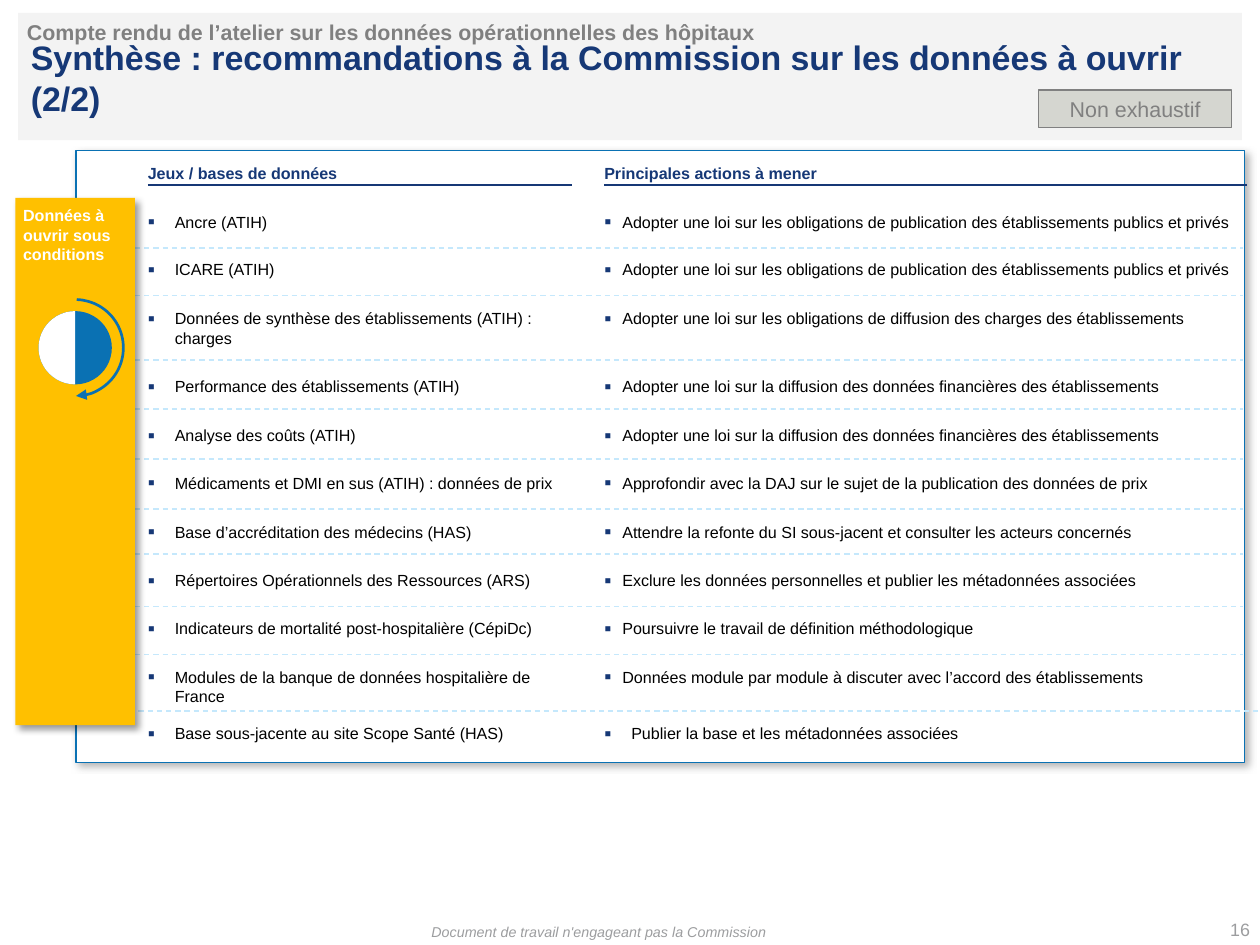
from dataclasses import dataclass

import lxml.etree
import pptx
import pptx.dml.color
import pptx.enum.dml
import pptx.enum.shapes
import pptx.enum.text
import pptx.oxml
import pptx.oxml.ns
import pptx.util
from pptx.dml.color import RGBColor
from pptx.enum.shapes import MSO_SHAPE
from pptx.enum.text import MSO_ANCHOR, PP_ALIGN
from pptx.util import Inches, Pt

NAVY = RGBColor(0x16, 0x38, 0x76)
BLUE = RGBColor(0x0A, 0x71, 0xB3)
PALE_BLUE = RGBColor(0xC5, 0xE8, 0xFC)
YELLOW = RGBColor(0xFF, 0xC0, 0x00)
WHITE = RGBColor(0xFF, 0xFF, 0xFF)
BLACK = RGBColor(0x00, 0x00, 0x00)
GREY = RGBColor(0x80, 0x80, 0x80)
FOOTER_GREY = RGBColor(0x9C, 0x9D, 0x9F)
BANNER_GREY = RGBColor(0xF3, 0xF3, 0xF3)
STICKER_GREY = RGBColor(0xD5, 0xD6, 0xD0)

FONT = "Arial"
DATASET_INDENT = 0.21
ACTION_INDENT = 0.14
RULE_SPAN = (0.62, 9.67)


@dataclass(frozen=True)
class Box:
    left: float
    top: float
    width: float
    height: float


@dataclass(frozen=True)
class TextStyle:
    size: float
    color: RGBColor
    bold: bool = False
    italic: bool = False
    align: PP_ALIGN = PP_ALIGN.LEFT
    anchor: MSO_ANCHOR = MSO_ANCHOR.TOP
    wrap: bool = True
    insets: tuple[float, float, float, float] = (0, 0, 0, 0)


@dataclass(frozen=True)
class Column:
    heading: str
    left: float
    width: float
    rule_end: float


@dataclass(frozen=True)
class Row:
    top: float
    dataset: str
    action: str
    rule: float | None
    action_indent: float = ACTION_INDENT
    rule_span: tuple[float, float] = RULE_SPAN


DATASETS = Column("Jeux / bases de données", 1.15, 3.3, 4.45)
ACTIONS = Column("Principales actions à mener", 4.7, 4.99, 9.7)

PUBLICATION_LAW = "Adopter une loi sur les obligations de publication des établissements publics et privés"
FINANCE_LAW = "Adopter une loi sur la diffusion des données financières des établissements"

ROWS = [
    Row(1.65, "Ancre (ATIH)", PUBLICATION_LAW, 1.93),
    Row(2.02, "ICARE (ATIH)", PUBLICATION_LAW, 2.3),
    Row(2.4, "Données de synthèse des établissements (ATIH) : charges",
        "Adopter une loi sur les obligations de diffusion des charges des établissements", 2.8),
    Row(2.93, "Performance des établissements (ATIH)", FINANCE_LAW, 3.18),
    Row(3.31, "Analyse des coûts (ATIH)", FINANCE_LAW, 3.57),
    Row(3.68, "Médicaments et DMI en sus (ATIH) : données de prix",
        "Approfondir avec la DAJ sur le sujet de la publication des données de prix", 3.96),
    Row(4.06, "Base d’accréditation des médecins (HAS)",
        "Attendre la refonte du SI sous-jacent et consulter les acteurs concernés", 4.31),
    Row(4.44, "Répertoires Opérationnels des Ressources (ARS)",
        "Exclure les données personnelles et publier les métadonnées associées", 4.72),
    Row(4.81, "Indicateurs de mortalité post-hospitalière (CépiDc)",
        "Poursuivre le travail de définition méthodologique", 5.09),
    Row(5.19, "Modules de la banque de données hospitalière de France",
        "Données module par module à discuter avec l’accord des établissements", 5.53,
        rule_span=(0.79, 9.8)),
    Row(5.63, "Base sous-jacente au site Scope Santé (HAS)",
        "Publier la base et les métadonnées associées", None, action_indent=DATASET_INDENT),
]

BODY = TextStyle(9, BLACK)
HEADING = TextStyle(9, NAVY, bold=True, anchor=MSO_ANCHOR.BOTTOM, insets=(0, 0, 0, 0.02))


def add_child(parent, tag: str, **attributes: str):
    child = lxml.etree.SubElement(parent, pptx.oxml.ns.qn(tag))
    for name, value in attributes.items():
        child.set(name, value)
    return child


def add_bullet(paragraph, indent: float) -> None:
    properties = paragraph._p.get_or_add_pPr()
    properties.set("marL", str(Inches(indent)))
    properties.set("indent", str(-Inches(indent)))
    add_child(add_child(properties, "a:buClr"), "a:srgbClr", val=str(NAVY))
    add_child(properties, "a:buSzPct", val="125000")
    add_child(properties, "a:buFont", typeface=FONT)
    add_child(properties, "a:buChar", char="▪")


def write_text(shape, text: str, style: TextStyle, indent: float | None = None) -> None:
    frame = shape.text_frame
    frame.word_wrap = style.wrap
    frame.vertical_anchor = style.anchor
    (frame.margin_left, frame.margin_top,
     frame.margin_right, frame.margin_bottom) = map(Inches, style.insets)
    paragraph = frame.paragraphs[0]
    paragraph.alignment = style.align
    if indent is not None:
        add_bullet(paragraph, indent)
    run = paragraph.add_run()
    run.text = text
    run.font.name = FONT
    run.font.size = Pt(style.size)
    run.font.bold = style.bold
    run.font.italic = style.italic
    run.font.color.rgb = style.color


def add_text(slide, box: Box, text: str, style: TextStyle, indent: float | None = None) -> None:
    shape = slide.shapes.add_textbox(
        Inches(box.left), Inches(box.top), Inches(box.width), Inches(box.height))
    write_text(shape, text, style, indent)


def add_figure(slide, kind: MSO_SHAPE, box: Box, fill: RGBColor | None = None,
               line: RGBColor | None = None, weight: float = 0.75,
               adjustments: tuple[float, ...] = ()):
    shape = slide.shapes.add_shape(
        kind, Inches(box.left), Inches(box.top), Inches(box.width), Inches(box.height))
    shape.shadow.inherit = False
    for index, value in enumerate(adjustments):
        shape.adjustments[index] = value
    if fill is None:
        shape.fill.background()
    else:
        shape.fill.solid()
        shape.fill.fore_color.rgb = fill
    if line is None:
        shape.line.fill.background()
    else:
        shape.line.color.rgb = line
        shape.line.width = Pt(weight)
    return shape


def add_shadow(shape, color: RGBColor, opacity: int) -> None:
    effects = shape._element.spPr.find(pptx.oxml.ns.qn("a:effectLst"))
    shadow = add_child(effects, "a:outerShdw", blurRad=str(Pt(4)), dist=str(Pt(3)),
                       dir="2700000", algn="tl", rotWithShape="0")
    add_child(add_child(shadow, "a:srgbClr", val=str(color)), "a:alpha", val=str(opacity * 1000))


def add_rule(slide, start: float, end: float, top: float, color: RGBColor, dashed: bool = False) -> None:
    rule = slide.shapes.add_connector(
        pptx.enum.shapes.MSO_CONNECTOR.STRAIGHT, Inches(start), Inches(top), Inches(end), Inches(top))
    rule.line.color.rgb = color
    rule.line.width = Pt(0.75)
    if dashed:
        rule.line.dash_style = pptx.enum.dml.MSO_LINE.DASH
    add_child(rule._element.spPr, "a:effectLst")


def add_header(slide) -> None:
    add_figure(slide, MSO_SHAPE.RECTANGLE, Box(0.14, 0.1, 9.52, 0.99), BANNER_GREY)
    add_text(slide, Box(0.24, 0.28, 9.32, 0.64),
             "Synthèse : recommandations à la Commission sur les données à ouvrir (2/2)",
             TextStyle(19, NAVY, bold=True, anchor=MSO_ANCHOR.MIDDLE))
    add_text(slide, Box(0.21, 0.15, 5.7, 0.2),
             "Compte rendu de l’atelier sur les données opérationnelles des hôpitaux",
             TextStyle(12, GREY, bold=True))
    sticker = add_figure(slide, MSO_SHAPE.RECTANGLE, Box(8.08, 0.7, 1.5, 0.29), STICKER_GREY, GREY)
    write_text(sticker, "Non exhaustif",
               TextStyle(12, GREY, align=PP_ALIGN.CENTER, anchor=MSO_ANCHOR.MIDDLE))


def add_recommendations(slide) -> None:
    panel = add_figure(slide, MSO_SHAPE.RECTANGLE, Box(0.59, 1.17, 9.09, 4.76), WHITE, BLUE)
    add_shadow(panel, GREY, 60)
    for column in (DATASETS, ACTIONS):
        add_rule(slide, column.left, column.rule_end, 1.44, NAVY)
        add_text(slide, Box(column.left, 1.27, column.width, 0.17), column.heading, HEADING)
    for row in ROWS:
        if row.rule is not None:
            add_rule(slide, *row.rule_span, row.rule, PALE_BLUE, dashed=True)
        for column, text, indent in ((DATASETS, row.dataset, DATASET_INDENT),
                                     (ACTIONS, row.action, row.action_indent)):
            add_text(slide, Box(column.left, row.top, column.width, 0.15), text, BODY, indent)


def add_condition_band(slide) -> None:
    band = add_figure(slide, MSO_SHAPE.RECTANGLE, Box(0.12, 1.54, 0.93, 4.1), YELLOW)
    add_shadow(band, BLACK, 40)
    write_text(band, "Données à ouvrir sous conditions",
               TextStyle(9, WHITE, bold=True, insets=(0.06, 0.06, 0.04, 0.06)))
    disc = Box(0.3, 2.42, 0.57, 0.57)
    add_figure(slide, MSO_SHAPE.OVAL, disc, BLUE)
    add_figure(slide, MSO_SHAPE.PIE, disc, WHITE, adjustments=(54, 162))
    arrow = add_figure(slide, MSO_SHAPE.ARC, Box(0.21, 2.33, 0.75, 0.75), line=BLUE, weight=1.5,
                       adjustments=(163.12, 53.41))
    add_child(arrow.line._get_or_add_ln(), "a:tailEnd", type="triangle")


def add_footer(slide) -> None:
    centred = {"align": PP_ALIGN.CENTER, "anchor": MSO_ANCHOR.MIDDLE, "wrap": False}
    add_text(slide, Box(3.31, 7.18, 2.7, 0.13), "Document de travail n'engageant pas la Commission",
             TextStyle(8, FOOTER_GREY, italic=True, **centred))
    add_text(slide, Box(9.52, 7.14, 0.25, 0.17), "16", TextStyle(10, FOOTER_GREY, **centred))


def main() -> None:
    presentation = pptx.Presentation()
    presentation.slide_width = Inches(9.8)
    presentation.slide_height = Inches(7.35)
    slide = presentation.slides.add_slide(presentation.slide_layouts[6])
    add_header(slide)
    add_recommendations(slide)
    add_condition_band(slide)
    add_footer(slide)
    presentation.save("out.pptx")


if __name__ == "__main__":
    main()
